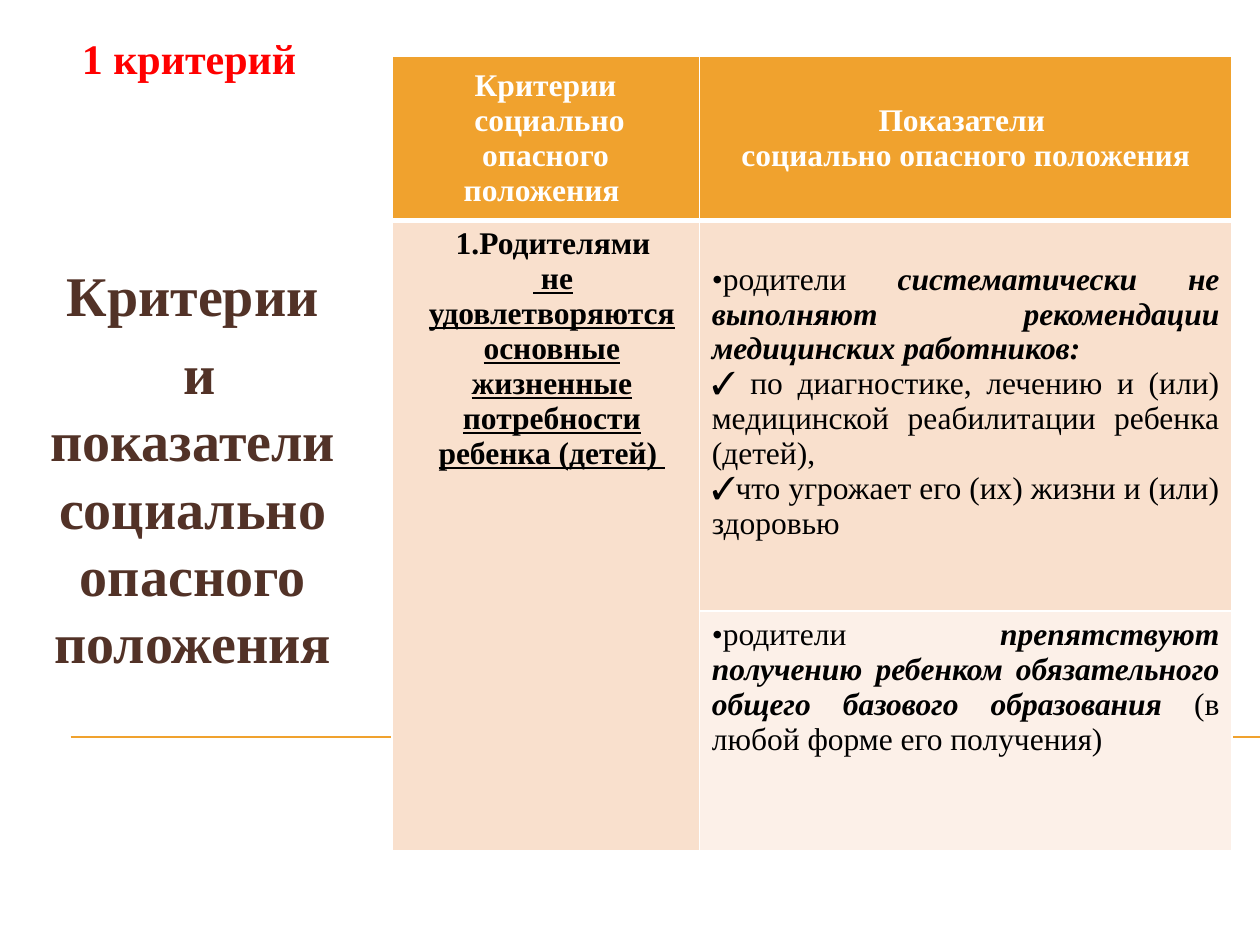
from dataclasses import dataclass, field
from lxml.etree import SubElement
from pptx import Presentation
from pptx.dml.color import RGBColor
from pptx.enum.shapes import MSO_CONNECTOR
from pptx.enum.text import MSO_ANCHOR, MSO_AUTO_SIZE, PP_ALIGN
from pptx.oxml.ns import qn
from pptx.util import Inches, Pt

HUES = {"gold": "F0A22E", "peach": "F9E0CD", "cream": "FCF0E8", "white": "FFFFFF",
        "black": "000000", "brown": "523227", "red": "FF0000"}
FACE = "Times New Roman"
BOLD = {"bold": True}
STRONG = {"bold": True, "italic": True}
UNDER = {"bold": True, "underline": True}


@dataclass
class Para:
    runs: list[tuple[str, dict]]
    align: PP_ALIGN = PP_ALIGN.CENTER
    before: float = 0
    bullet: str = ""
    margin: float = 0
    indent: float = 0


@dataclass
class Box:
    row: int
    col: int
    fill: str
    hue: str
    paras: list[Para] = field(default_factory=list)
    anchor: MSO_ANCHOR = MSO_ANCHOR.TOP
    base: float = 1
    top: float = 0.05


def color(name: str) -> RGBColor:
    return RGBColor.from_string(HUES[name])


def mark(props, item: Para) -> None:
    props.set("marL", str(Inches(item.margin)))
    props.set("indent", str(Inches(item.indent)))
    if item.bullet:
        SubElement(props, qn("a:buFont"), typeface=FACE)
    if item.bullet == "1.":
        SubElement(props, qn("a:buAutoNum"), type="arabicPeriod")
    elif item.bullet:
        SubElement(props, qn("a:buChar"), char=item.bullet)
    else:
        SubElement(props, qn("a:buNone"))


def write(frame, paras: list[Para], size: float, hue: str) -> None:
    for spot, item in enumerate(paras):
        par = frame.add_paragraph() if spot else frame.paragraphs[0]
        looks = {"alignment": item.align, "space_before": Pt(item.before),
                 "line_spacing": 1.0}
        for key, value in looks.items():
            setattr(par, key, value)
        mark(par._p.get_or_add_pPr(), item)
        for text, style in item.runs:
            for part, line in enumerate(text.split("\n")):
                if part:
                    par.add_line_break()
                run = par.add_run()
                run.text = line
                for key, value in ({"name": FACE, "size": Pt(size)} | style).items():
                    setattr(run.font, key, value)
                run.font.color.rgb = color(hue)


def edge(cell, base: float) -> None:
    props = cell._tc.get_or_add_tcPr()
    for side, width in {"L": 1, "R": 1, "T": 1, "B": base}.items():
        line = SubElement(props, qn(f"a:ln{side}"), w=str(Pt(width)))
        fill = SubElement(line, qn("a:solidFill"))
        SubElement(fill, qn("a:srgbClr"), val=HUES["white"])


def paint(table, box: Box) -> None:
    cell = table.cell(box.row, box.col)
    edge(cell, box.base)
    cell.fill.solid()
    cell.fill.fore_color.rgb = color(box.fill)
    cell.vertical_anchor = box.anchor
    cell.margin_top = Inches(box.top)
    if box.paras:
        write(cell.text_frame, box.paras, 18, box.hue)


def head(col: int, *texts: str) -> Box:
    return Box(0, col, "gold", "white", [Para([(text, BOLD)]) for text in texts],
               MSO_ANCHOR.MIDDLE, 3)


def point(bullet: str, *runs: tuple[str, dict]) -> Para:
    return Para(list(runs), PP_ALIGN.JUSTIFY, bullet=bullet)


BOXES = [
    head(0, "Критерии", " социально\nопасного положения "),
    head(1, "Показатели ", "социально опасного положения"),
    Box(1, 0, "peach", "black", [
        Para([("Родителями", BOLD)], bullet="1.", margin=0.1, indent=0.02),
        Para([(" не\nудовлетворяются\nосновные жизненные потребности\nребенка (детей) ",
               UNDER)], margin=0.1, indent=0.02)]),
    Box(1, 1, "peach", "black", [
        point("•", ("родители ", {}),
              ("систематически не выполняют рекомендации медицинских работников:", STRONG)),
        point("✓", (" по диагностике, лечению и (или) медицинской реабилитации "
                    "ребенка (детей), ", {})),
        point("✓", ("что угрожает его (их) жизни и (или) здоровью", {}))], top=0.33),
    Box(2, 0, "peach", "black"),
    Box(2, 1, "cream", "black", [
        point("•", ("родители ", {}),
              ("препятствуют получению ребенком обязательного общего базового образования",
               STRONG),
              (" (в любой форме его получения)", {}))]),
]


def main() -> None:
    deck = Presentation()
    deck.slide_width, deck.slide_height = Inches(10), Inches(7.5)
    slide = deck.slides.add_slide(deck.slide_layouts[5])
    shapes = slide.shapes

    rule = shapes.add_connector(MSO_CONNECTOR.STRAIGHT, Inches(0.56), Inches(5.85),
                                Inches(10), Inches(5.85))
    rule.line.color.rgb = color("gold")
    rule.line.width = Pt(0.75)
    SubElement(rule._element.spPr, qn("a:effectLst"))

    title = shapes.title
    place = {"left": Inches(0.27), "top": Inches(2.02), "width": Inches(2.52),
             "height": Inches(3.7)}
    for key, value in place.items():
        setattr(title, key, value)
    frame = title.text_frame
    looks = {"margin_left": 0, "margin_right": 0, "margin_top": Inches(0.05),
             "margin_bottom": Inches(0.05), "word_wrap": True,
             "auto_size": MSO_AUTO_SIZE.NONE, "vertical_anchor": MSO_ANCHOR.TOP}
    for key, value in looks.items():
        setattr(frame, key, value)
    texts = ("Критерии", " и показатели социально опасного положения")
    write(frame, [Para([(text, BOLD)], before=6) for text in texts], 32, "brown")

    table = shapes.add_table(3, 2, Inches(3.11), Inches(0.45), Inches(6.67),
                             Inches(6.3)).table
    table.first_row = table.horz_banding = False
    for col, width in zip(table.columns, (2.44, 4.23)):
        col.width = Inches(width)
    for row, height in zip(table.rows, (1.3, 3.1, 1.9)):
        row.height = Inches(height)
    table.cell(1, 0).merge(table.cell(2, 0))
    for box in BOXES:
        paint(table, box)

    label = shapes.add_textbox(Inches(0.35), Inches(0.21), Inches(2.3), Inches(0.51))
    label.text_frame.word_wrap = True
    label.text_frame.auto_size = MSO_AUTO_SIZE.SHAPE_TO_FIT_TEXT
    write(label.text_frame, [Para([("1 критерий", BOLD)])], 24, "red")

    deck.save("out.pptx")


if __name__ == "__main__":
    main()
